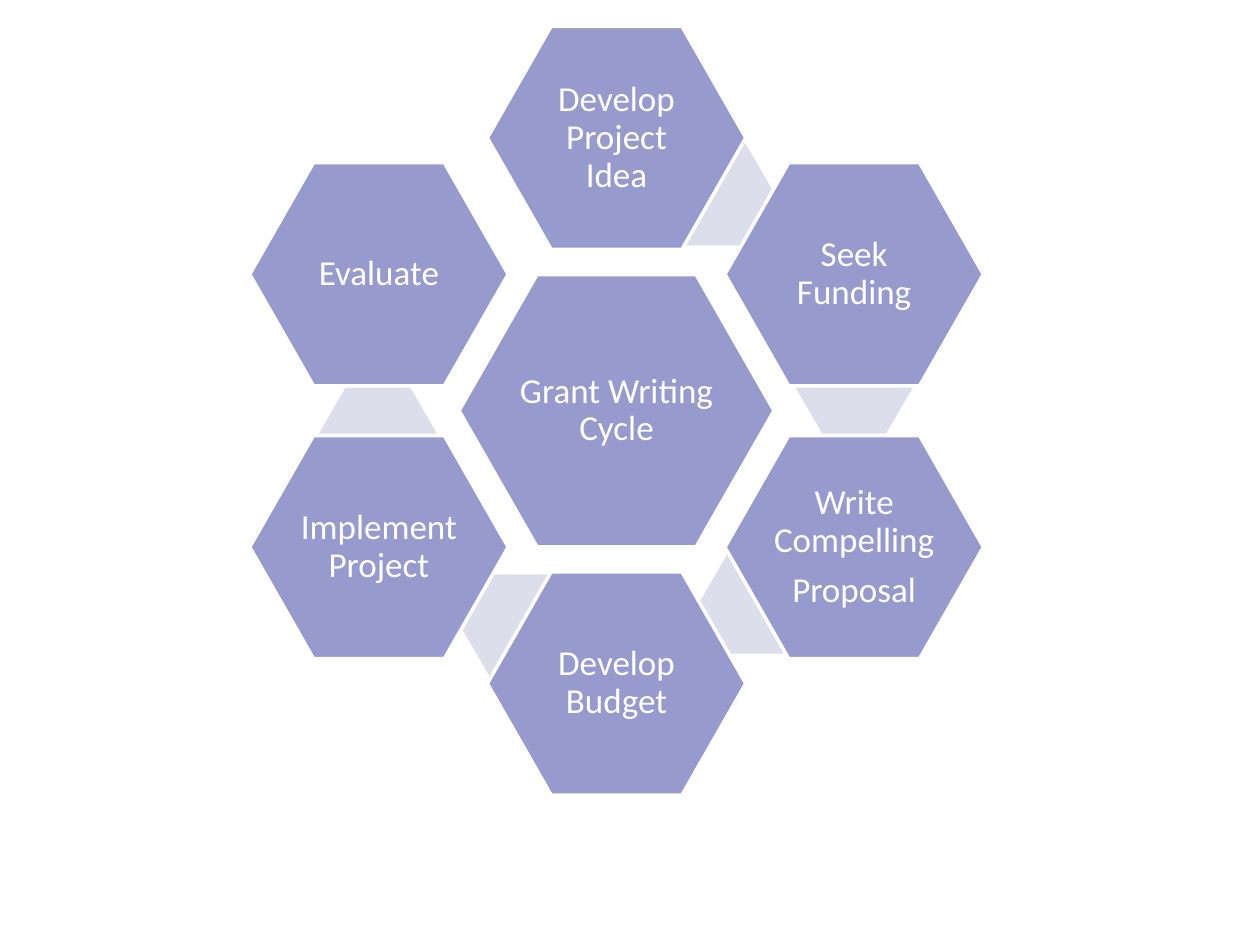
"""Build a slide with the grant writing cycle as a ring of hexagons."""
from pptx import Presentation
from pptx.dml.color import RGBColor
from pptx.enum.shapes import MSO_SHAPE
from pptx.enum.text import MSO_ANCHOR, PP_ALIGN
from pptx.util import Cm, Pt

HEX = MSO_SHAPE.HEXAGON
MIDDLE = MSO_ANCHOR.MIDDLE
CENTER = PP_ALIGN.CENTER
WHITE, BLUE, PALE = "FFFFFF", "969ACC", "DDDEEC"
MID_X, MID_Y = 12.43, 8.28
STEP_X, STEP_Y = 4.79, 2.75


def paint(fmt, color):
    fmt.solid()
    fmt.fore_color.rgb = RGBColor.from_string(color)


def add_hex(x, y, wide, high, color, adj):
    shape = slide.shapes.add_shape(
        HEX, Cm(x - wide / 2), Cm(y - high / 2), Cm(wide), Cm(high))
    shape.adjustments[0] = adj
    shape.shadow.inherit = False
    paint(shape.fill, color)
    shape.line.fill.background()
    return shape


deck = Presentation()
deck.slide_width, deck.slide_height = Cm(25.4), Cm(19.05)
slide = deck.slides.add_slide(deck.slide_layouts[6])

cells = [
    (0, 0, ["Grant Writing Cycle"], None),
    (0, -2, ["Develop Project Idea"], (14.43, 3.92)),
    (1, -1, ["Seek Funding"], (17.22, 7.79)),
    (1, 1, ["Write Compelling", "Proposal"], (15.29, 12.15)),
    (0, 2, ["Develop Budget"], (10.47, 12.61)),
    (-1, 1, ["Implement Project"], (7.62, 8.75)),
    (-1, -1, ["Evaluate"], None),
]

for col, row, lines, link in cells:
    if link:
        add_hex(*link, 2.39, 2.06, PALE, 0.29)
    size = (5.21, 4.5) if row else (6.35, 5.49)
    cell = add_hex(MID_X + col * STEP_X, MID_Y + row * STEP_Y,
                   *size, BLUE, 0.286)
    paint(cell.line.fill, WHITE)
    cell.line.width = Pt(2)
    frame = cell.text_frame
    frame.word_wrap = True
    frame.vertical_anchor = MIDDLE
    frame.margin_left = frame.margin_right = Cm(0.07)
    frame.margin_top = frame.margin_bottom = Cm(0.07)
    for num, line in enumerate(lines):
        para = frame.add_paragraph() if num else frame.paragraphs[0]
        para.alignment = CENTER
        para.line_spacing = 0.9
        para.space_after = Pt(7)
        run = para.add_run()
        run.text = line
        run.font.name = "Calibri"
        run.font.size = Pt(20)
        paint(run.font.fill, WHITE)

deck.save("out.pptx")
